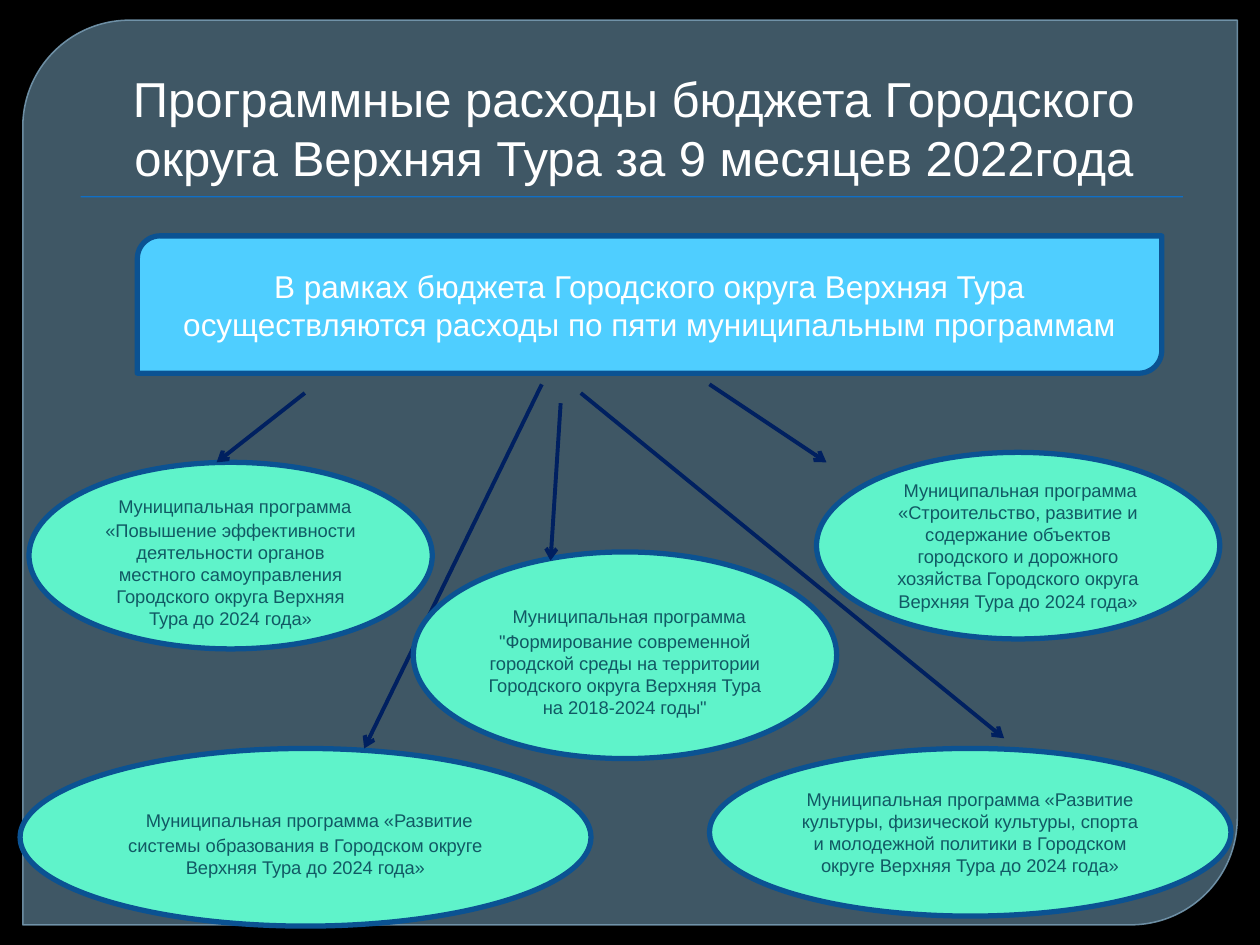
"""Build the slide on programme spending of a town budget."""
from lxml import etree
from pptx import Presentation
from pptx.dml.color import RGBColor
from pptx.enum import shapes as kinds, text as txt
from pptx.oxml import ns
from pptx.util import Pt

BLACK = RGBColor(0x00, 0x00, 0x00)
WHITE = RGBColor(0xFF, 0xFF, 0xFF)
PANEL = RGBColor(0x61, 0x86, 0x9C)
PANEL_EDGE = RGBColor(0x77, 0x9B, 0xB2)
RULE = RGBColor(0x0F, 0x6F, 0xC6)
SKY = RGBColor(0x4F, 0xCE, 0xFF)
MINT = RGBColor(0x5F, 0xF3, 0xCA)
EDGE = RGBColor(0x0B, 0x52, 0x92)
TEAL = RGBColor(0x11, 0x59, 0x64)
NAVY = RGBColor(0x00, 0x20, 0x60)
FONT = "Arial"

HEADING = "Программные расходы бюджета Городского округа Верхняя Тура за 9 месяцев 2022года"
SUMMARY = ("В рамках бюджета Городского округа Верхняя Тура осуществляются "
           "расходы по пяти муниципальным программам")
PREFIX = "Муниципальная программа "
PROGRAMMES = [
    ("«Повышение эффективности деятельности органов местного самоуправления "
     "Городского округа Верхняя Тура до 2024 года»",
     (16.6, 264.2, 230.4, 106.6), (FONT, 18), ((174.2, 224.6), (123.8, 264.2))),
    ("«Строительство, развитие и содержание объектов городского и дорожного "
     "хозяйства Городского округа Верхняя Тура до 2024 года»",
     (466.6, 258.5, 230.4, 106.6), ("Roboto Slab", 10.5), ((405.4, 219.6), (472.3, 264.2))),
    ("«Развитие культуры, физической культуры, спорта и молодежной политики "
     "в Городском округе Верхняя Тура до 2024 года»",
     (405.4, 427.7, 298, 95.8), None, ((331.9, 224.6), (573.8, 421.9))),
    ("«Развитие системы образования в Городском округе Верхняя Тура до 2024 года»",
     (11.5, 427.7, 326.2, 101.5), ("Times New Roman", 18), ((309.6, 219.6), (208.1, 427.7))),
    ("\"Формирование современной городской среды на территории Городского округа "
     "Верхняя Тура на 2018-2024 годы\"",
     (236.2, 315.4, 241.9, 118.1), (FONT, 18), ((320.4, 230.4), (314.6, 320.4))),
]


def set_alpha(color_format_parent, percent):
    color = color_format_parent.find(".//" + ns.qn("a:srgbClr"))
    etree.SubElement(color, ns.qn("a:alpha"), val=str(percent * 1000))


def add_block(slide, kind, box, fill, edge=None, width=3):
    block = slide.shapes.add_shape(kind, *map(Pt, box))
    block.shadow.inherit = False
    block.fill.solid()
    block.fill.fore_color.rgb = fill
    if edge is None:
        block.line.fill.background()
    else:
        block.line.color.rgb = edge
        block.line.width = Pt(width)
    return block


def style(run, size, color, font=FONT):
    run.font.size, run.font.name = Pt(size), font
    run.font.color.rgb = color


def write(block, wording, size, color, lead=None):
    frame = block.text_frame
    frame.word_wrap = True
    frame.vertical_anchor = txt.MSO_ANCHOR.MIDDLE
    paragraph = frame.paragraphs[0]
    paragraph.alignment = txt.PP_ALIGN.CENTER
    if lead:
        paragraph.text = " "
        style(paragraph.runs[0], lead[1], color, lead[0])
    run = paragraph.add_run()
    run.text = wording
    style(run, size, color)


def add_arrow(slide, start, end):
    arrow = slide.shapes.add_connector(
        kinds.MSO_CONNECTOR.STRAIGHT, *map(Pt, start + end))
    arrow.line.color.rgb = NAVY
    arrow.line.width = Pt(2.25)
    etree.SubElement(arrow.line._get_or_add_ln(), ns.qn("a:tailEnd"), type="arrow")
    etree.SubElement(arrow._element.spPr, ns.qn("a:effectLst"))


def add_backdrop(slide):
    slide.background.fill.solid()
    slide.background.fill.fore_color.rgb = BLACK
    panel = add_block(slide, kinds.MSO_SHAPE.ROUND_2_DIAG_RECTANGLE,
                      (13, 11.5, 694, 517), PANEL, PANEL_EDGE, 0.87)
    panel.adjustments[0] = 0.118
    properties = panel._element.spPr
    set_alpha(properties.find(ns.qn("a:solidFill")), 65)
    set_alpha(properties.find(ns.qn("a:ln")), 88)
    add_block(slide, kinds.MSO_SHAPE.RECTANGLE, (46, 112.1, 630, 0.8), RULE)


def add_heading(slide):
    title = slide.shapes.title
    title.left, title.top, title.width, title.height = map(Pt, (36, 20, 648, 90))
    frame = title.text_frame
    frame.text = HEADING
    frame.word_wrap = True
    frame.auto_size = txt.MSO_AUTO_SIZE.NONE
    frame.vertical_anchor = txt.MSO_ANCHOR.BOTTOM
    paragraph = frame.paragraphs[0]
    paragraph.alignment = txt.PP_ALIGN.CENTER
    paragraph._p.get_or_add_pPr().set("marL", str(Pt(4.3)))
    style(paragraph.runs[0], 28, WHITE)
    slide.shapes._spTree.append(title._element)


def main():
    deck = Presentation()
    deck.slide_width, deck.slide_height = Pt(720), Pt(540)
    slide = deck.slides.add_slide(deck.slide_layouts[5])
    add_backdrop(slide)
    add_heading(slide)
    summary = add_block(slide, kinds.MSO_SHAPE.ROUND_2_DIAG_RECTANGLE,
                        (78.5, 134.8, 585.4, 78.5), SKY, EDGE)
    write(summary, SUMMARY, 18, WHITE)

    *outer, central = PROGRAMMES
    for group in (outer, [central]):
        for goal, box, lead, _ in group:
            oval = add_block(slide, kinds.MSO_SHAPE.OVAL, box, MINT, EDGE)
            write(oval, PREFIX + goal, 10.5, TEAL, lead)
        for *_, (start, end) in group:
            add_arrow(slide, start, end)
    deck.save("out.pptx")


if __name__ == "__main__":
    main()
